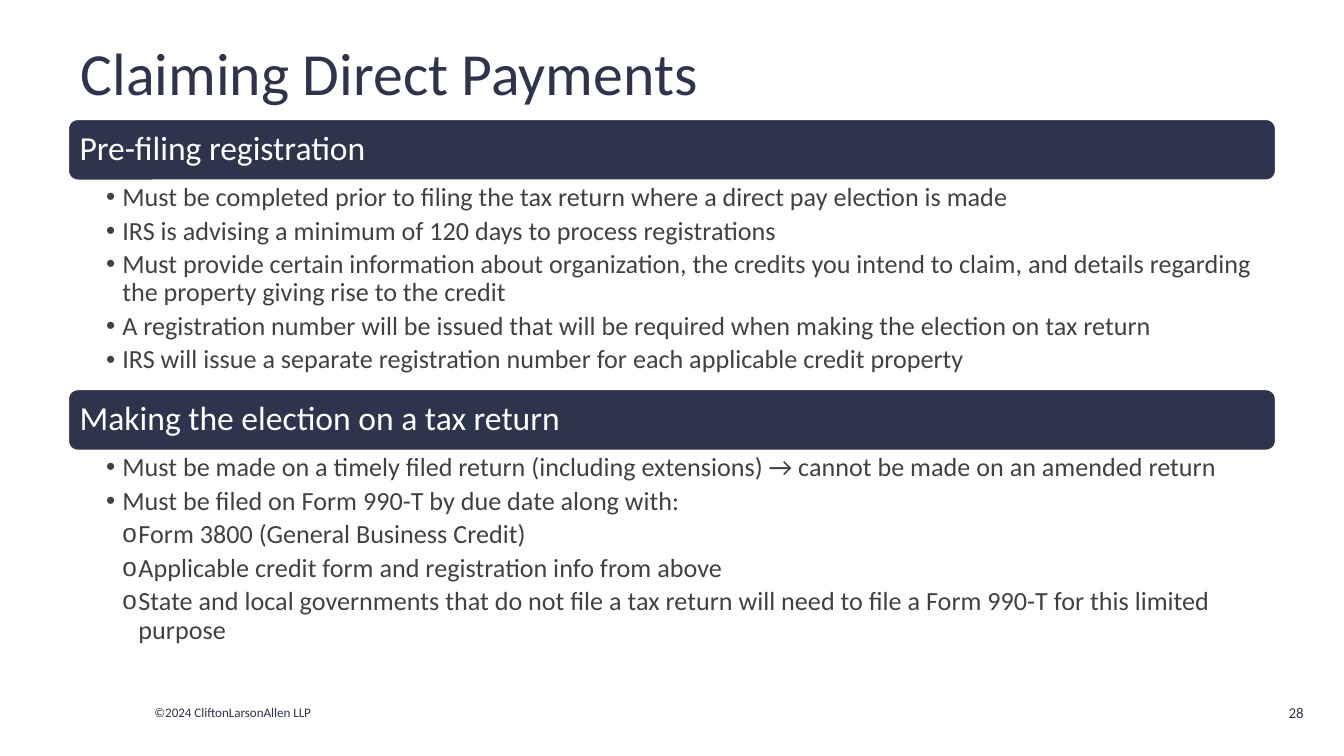
from dataclasses import dataclass

from lxml import etree
from pptx import Presentation
from pptx import util as u
from pptx.dml.color import RGBColor
from pptx.enum import shapes, text
from pptx.oxml.ns import qn

# Grid: square cells of a tenth of an inch
CELL = 0.1
COLS, ROWS = 100, 56.25
LEFT, WIDTH = 5, 90
FIRST_ROW, SECTION_STEP = 8.8, 20.1
HEAD_ROWS, LIST_ROWS = 4.7, 15.3

FONT, BULLET_FONT = "Calibri", "Arial"
NAVY, GREY, WHITE = "2E334E", "414142", "FFFFFF"
BULLETS = {1: "•", 2: "o"}
INDENT = 0.12


@dataclass
class Item:
    text: str
    level: int = 1


@dataclass
class Section:
    heading: str
    items: list[Item]


SECTIONS = [
    Section("Pre-filing registration", [
        Item("Must be completed prior to filing the tax return where a direct pay election is made"),
        Item("IRS is advising a minimum of 120 days to process registrations"),
        Item("Must provide certain information about organization, the credits you intend "
             "to claim, and details regarding the property giving rise to the credit"),
        Item("A registration number will be issued that will be required when making "
             "the election on tax return"),
        Item("IRS will issue a separate registration number for each applicable credit property"),
    ]),
    Section("Making the election on a tax return", [
        Item("Must be made on a timely filed return (including extensions) → "
             "cannot be made on an amended return"),
        Item("Must be filed on Form 990-T by due date along with:"),
        Item("Form 3800 (General Business Credit)", 2),
        Item("Applicable credit form and registration info from above", 2),
        Item("State and local governments that do not file a tax return will need "
             "to file a Form 990-T for this limited purpose", 2),
    ]),
]


def cells(n: float) -> int:
    return u.Inches(n * CELL)


def rgb(value: str) -> RGBColor:
    return RGBColor.from_string(value)


def place(sp, col: float, row: float, cols: float, rows: float) -> None:
    sp.left, sp.top, sp.width, sp.height = map(cells, (col, row, cols, rows))


def set_frame(tf, anchor, left=0.1, top=0.05, right=0.1, bottom=0.05) -> None:
    tf.word_wrap = True
    tf.auto_size = text.MSO_AUTO_SIZE.NONE
    tf.vertical_anchor = anchor
    tf.margin_left, tf.margin_top = u.Inches(left), u.Inches(top)
    tf.margin_right, tf.margin_bottom = u.Inches(right), u.Inches(bottom)


def add_run(p, words: str, size: float, color: str, align=text.PP_ALIGN.LEFT) -> None:
    p.alignment = align
    r = p.add_run()
    r.text = words
    r.font.name, r.font.size = FONT, u.Pt(size)
    r.font.color.rgb = rgb(color)


def set_bullet(p, level: int) -> None:
    p.level = level
    pPr = p._p.get_or_add_pPr()
    pPr.set("marL", str(u.Inches(INDENT * level)))
    pPr.set("indent", str(-u.Inches(INDENT)))
    etree.SubElement(pPr, qn("a:buFont")).set("typeface", BULLET_FONT)
    etree.SubElement(pPr, qn("a:buChar")).set("char", BULLETS[level])


def draw_heading(slide, words: str, row: float) -> None:
    sp = slide.shapes.add_shape(shapes.MSO_SHAPE.ROUNDED_RECTANGLE,
                                cells(LEFT), cells(row), cells(WIDTH), cells(HEAD_ROWS))
    sp.shadow.inherit = False
    sp.fill.solid()
    sp.fill.fore_color.rgb = rgb(NAVY)
    sp.line.color.rgb = rgb(WHITE)
    sp.line.width = u.Pt(2)
    set_frame(sp.text_frame, text.MSO_ANCHOR.MIDDLE, left=0.07)
    p = sp.text_frame.paragraphs[0]
    p.line_spacing = 0.9
    add_run(p, words, 18, WHITE)


def draw_list(sp, items: list[Item], row: float) -> None:
    place(sp, LEFT, row, WIDTH, LIST_ROWS)
    tf = sp.text_frame
    set_frame(tf, text.MSO_ANCHOR.TOP, left=0.29, top=0.02, right=0.11, bottom=0.02)
    for i, item in enumerate(items):
        p = tf.add_paragraph() if i else tf.paragraphs[0]
        set_bullet(p, item.level)
        p.line_spacing = 0.9
        p.space_before, p.space_after = u.Pt(0), u.Pt(2.8)
        add_run(p, item.text, 14, GREY)


def draw_label(slide, words: str, size: float, col: float, row: float,
               cols: float, rows: float, align=text.PP_ALIGN.LEFT) -> None:
    sp = slide.shapes.add_textbox(*map(cells, (col, row, cols, rows)))
    set_frame(sp.text_frame, text.MSO_ANCHOR.MIDDLE)
    add_run(sp.text_frame.paragraphs[0], words, size, NAVY, align)


def main() -> None:
    prs = Presentation()
    prs.slide_width, prs.slide_height = cells(COLS), cells(ROWS)
    slide = prs.slides.add_slide(prs.slide_layouts.get_by_name("Two Content"))

    # Title
    title = slide.shapes.title
    place(title, LEFT, 1.6, WIDTH, 7.5)
    set_frame(title.text_frame, text.MSO_ANCHOR.MIDDLE)
    add_run(title.text_frame.paragraphs[0], "Claiming Direct Payments", 32, NAVY)

    # Sections: a heading bar above a list
    for i, section in enumerate(SECTIONS):
        row = FIRST_ROW + i * SECTION_STEP
        draw_heading(slide, section.heading, row)
        draw_list(slide.placeholders[i + 1], section.items, row + HEAD_ROWS)

    # Footer
    draw_label(slide, "©2024 CliftonLarsonAllen LLP", 7, 10.5, 51.9, 15.1, 2.2)
    draw_label(slide, "28", 8, 93.7, 51.1, 4.3, 3.8, text.PP_ALIGN.RIGHT)

    prs.save("out.pptx")


if __name__ == "__main__":
    main()
